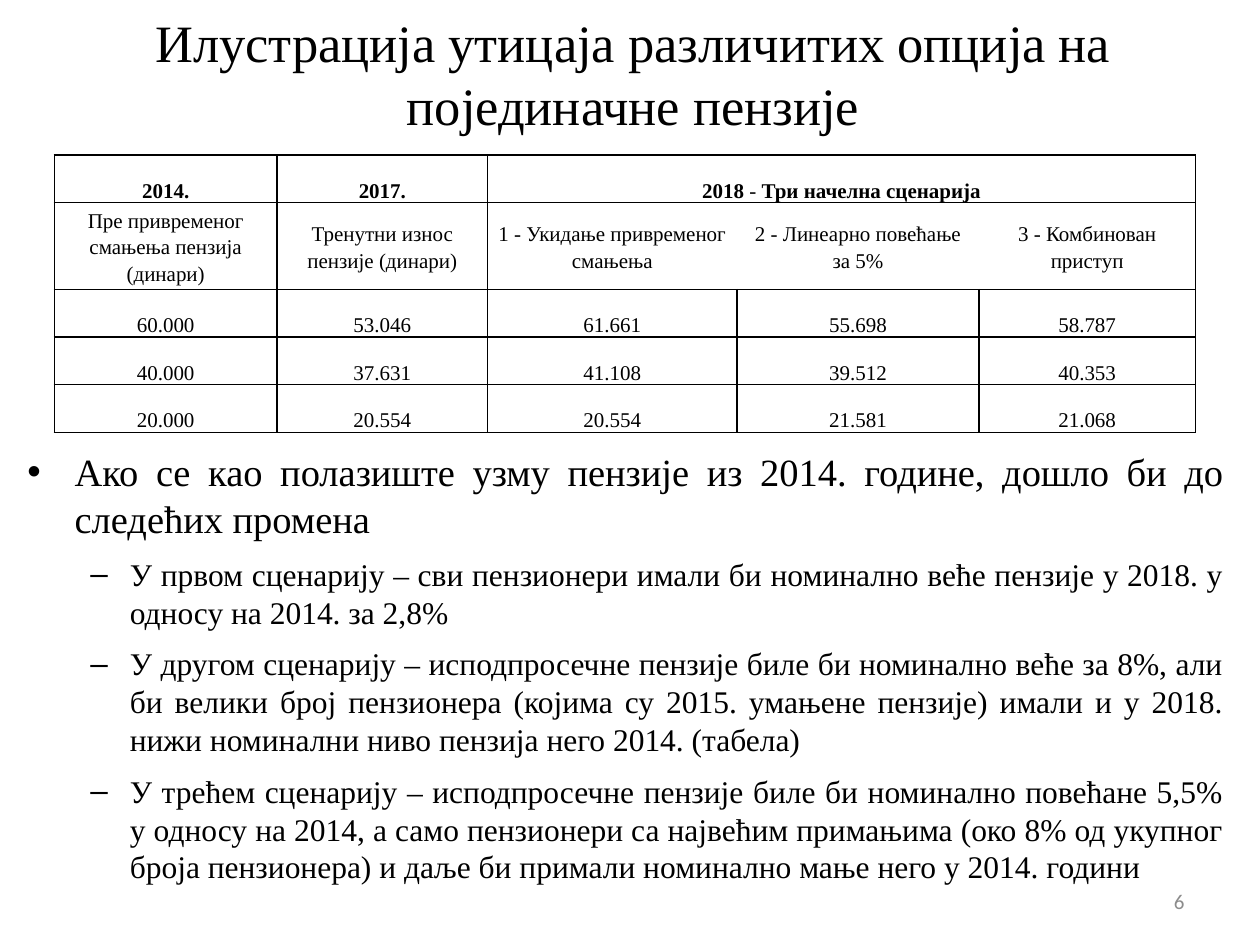
import lxml.etree
import pptx
import pptx.dml.color
import pptx.enum.text
import pptx.oxml
import pptx.oxml.ns
import pptx.util

Pt = pptx.util.Pt
ALIGN = pptx.enum.text.PP_ALIGN
ANCHOR = pptx.enum.text.MSO_ANCHOR
BLACK = pptx.dml.color.RGBColor(0x00, 0x00, 0x00)
GREY = pptx.dml.color.RGBColor(0x8C, 0x8C, 0x8C)

TITLE = "Илустрација утицаја различитих опција на појединачне пензије"
PERIODS = ["2014.", "2017.", [("2018 ", True), ("- ", False), ("Три начелна сценарија", True)], "", ""]
MEASURES = [
    "Пре привременог смањења пензија (динари)",
    "Тренутни износ пензије (динари)",
    "1 - Укидање привременог смањења",
    "2 - Линеарно повећање за 5%",
    "3 - Комбинован приступ",
]
PENSIONS = [
    ["60.000", "53.046", "61.661", "55.698", "58.787"],
    ["40.000", "37.631", "41.108", "39.512", "40.353"],
    ["20.000", "20.554", "20.554", "21.581", "21.068"],
]
PREMISE = "Ако се као полазиште узму пензије из 2014. године, дошло би до следећих промена"
OUTCOMES = [
    "У првом сценарију – сви пензионери имали би номинално веће пензије у 2018. у односу на 2014. за 2,8%",
    "У другом сценарију – исподпросечне пензије биле би номинално веће за 8%, али би велики број пензионера "
    "(којима су 2015. умањене пензије) имали и у 2018. нижи номинални ниво пензија него 2014. (табела)",
    "У трећем сценарију – исподпросечне пензије биле би номинално повећане 5,5% у односу на 2014, а само "
    "пензионери са највећим примањима (око 8% од укупног броја пензионера) и даље би примали номинално мање "
    "него у 2014. години",
]


def write(paragraph, text, *, size, font="Times New Roman", color=BLACK, bold=False,
          align=ALIGN.CENTER, line_spacing=None):
    paragraph.alignment = align
    if line_spacing:
        paragraph.line_spacing = line_spacing
    for words, is_bold in [(text, bold)] if isinstance(text, str) else text:
        run = paragraph.add_run()
        run.text = words
        run.font.size = Pt(size)
        run.font.name = font
        run.font.color.rgb = color
        run.font.bold = is_bold


class PensionSlide:
    """Draws the elements of one slide in a shared style."""

    def __init__(self, deck):
        self.slide = deck.slides.add_slide(deck.slide_layouts[6])
        self.border_width = Pt(1)

    def frame(self, left, top, width, height, anchor):
        frame = self.slide.shapes.add_textbox(Pt(left), Pt(top), Pt(width), Pt(height)).text_frame
        frame.word_wrap = True
        frame.vertical_anchor = anchor
        return frame

    def label(self, text, box, **style):
        write(self.frame(*box, ANCHOR.MIDDLE).paragraphs[0], text, **style)

    def outline(self, frame, items):
        for index, (text, level, mark, indent, hanging, size) in enumerate(items):
            paragraph = frame.add_paragraph() if index else frame.paragraphs[0]
            paragraph.level = level
            paragraph.space_before = paragraph.space_after = Pt(4)
            write(paragraph, text, size=size, align=ALIGN.JUSTIFY)
            properties = paragraph._p.get_or_add_pPr()
            properties.set("marL", str(Pt(indent)))
            properties.set("indent", str(Pt(-hanging)))
            font = lxml.etree.SubElement(properties, pptx.oxml.ns.qn("a:buFont"))
            font.set("typeface", "Arial")
            bullet = lxml.etree.SubElement(properties, pptx.oxml.ns.qn("a:buChar"))
            bullet.set("char", mark)

    def borders(self, cell, hidden):
        properties = cell._tc.get_or_add_tcPr()
        for position, side in enumerate("LRTB"):
            paint = "<a:noFill/>" if side in hidden else f'<a:solidFill><a:srgbClr val="{BLACK}"/></a:solidFill>'
            properties.insert(position, pptx.oxml.parse_xml(
                f'<a:ln{side} {pptx.oxml.ns.nsdecls("a")} w="{self.border_width}">{paint}</a:ln{side}>'))

    def table(self, rows, left, top, widths, heights):
        grid = self.slide.shapes.add_table(
            len(rows), len(widths), Pt(left), Pt(top), Pt(sum(widths)), Pt(sum(heights))).table
        grid.first_row = grid.horz_banding = False
        for column, width in zip(grid.columns, widths):
            column.width = Pt(width)
        for row, height in zip(grid.rows, heights):
            row.height = Pt(height)
        grid.cell(0, 2).merge(grid.cell(0, 4))
        open_sides = {2: "R", 3: "LR", 4: "L"}
        for r, texts in enumerate(rows):
            for c, text in enumerate(texts):
                cell = grid.cell(r, c)
                cell.fill.background()
                cell.margin_left = cell.margin_right = Pt(5)
                cell.margin_top = cell.margin_bottom = 0
                cell.vertical_anchor = ANCHOR.MIDDLE if r == 1 else ANCHOR.BOTTOM
                self.borders(cell, open_sides.get(c, "") if r == 1 else "")
                if text:
                    write(cell.text_frame.paragraphs[0], text, size=12, bold=r == 0, line_spacing=1.15)


def main():
    deck = pptx.Presentation()
    deck.slide_width, deck.slide_height = Pt(720), Pt(540)
    page = PensionSlide(deck)
    page.label(TITLE, (14.4, 17.3, 694.8, 49), size=30)
    page.label("6", (516, 500.5, 168, 28.75), size=12, font="Calibri", color=GREY, align=ALIGN.RIGHT)
    page.table([PERIODS, MEASURES, *PENSIONS], 31, 88.6,
               [127.4, 120.2, 142.6, 138.2, 123.8], [27.2, 49.7, 27.2, 27.2, 27.2])
    page.outline(page.frame(8.6, 252.7, 697.7, 266.4, ANCHOR.TOP),
                 [(PREMISE, 0, "•", 27, 27, 22)]
                 + [(outcome, 1, "–", 58.5, 22.5, 18) for outcome in OUTCOMES])
    deck.save("out.pptx")


if __name__ == "__main__":
    main()
